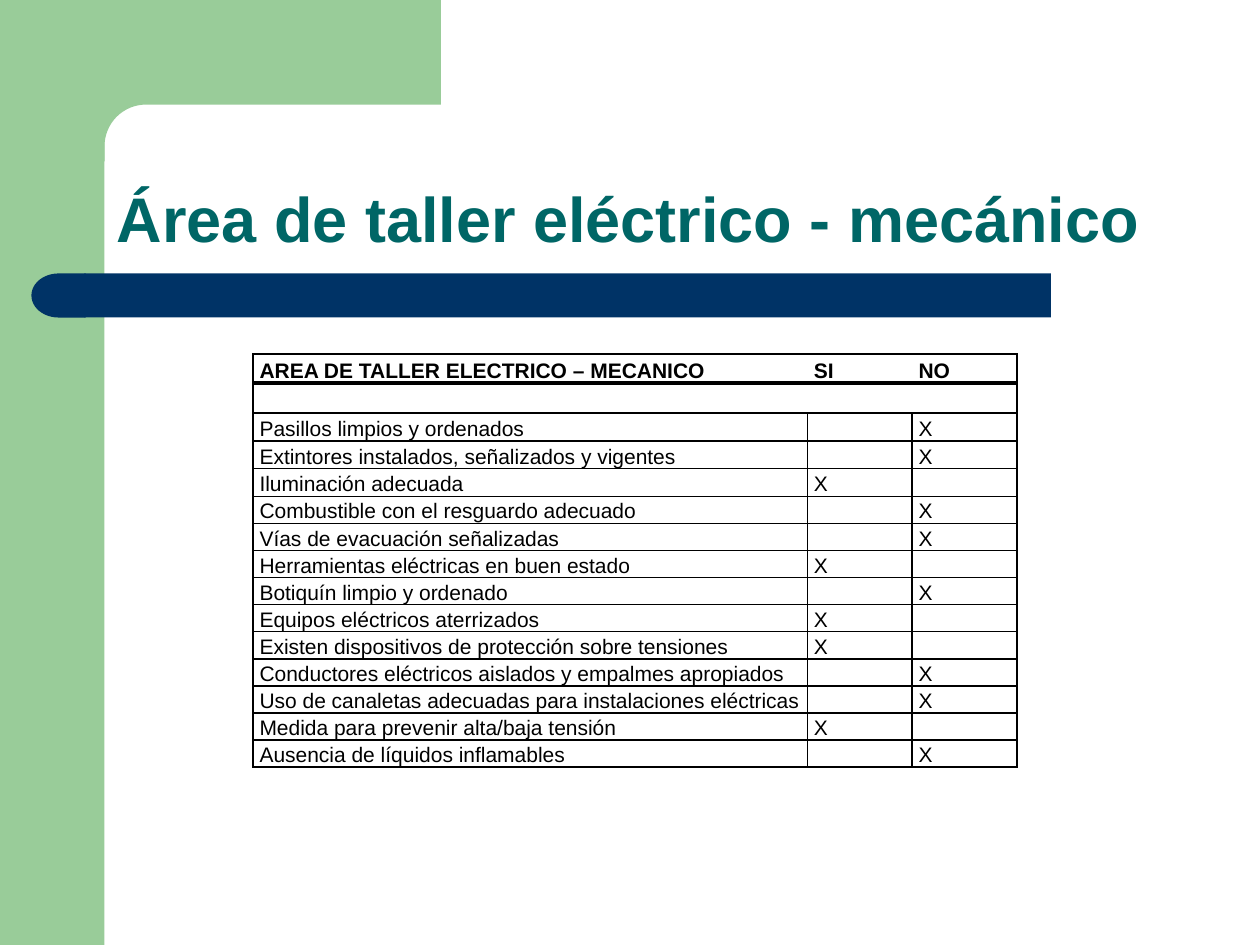
from math import cos, pi, sin

from lxml import etree
from pptx import Presentation
from pptx.dml.color import RGBColor
from pptx.enum.shapes import MSO_SHAPE
from pptx.enum.text import MSO_ANCHOR, PP_ALIGN
from pptx.oxml.ns import qn
from pptx.util import Inches, Pt

RECTANGLE = MSO_SHAPE.RECTANGLE
DELAY = MSO_SHAPE.FLOWCHART_DELAY
BOTTOM = MSO_ANCHOR.BOTTOM
LEFT = PP_ALIGN.LEFT

FONT = "Arial"
COLORS = {"green": "99CC99", "navy": "003366", "teal": "006666", "black": "000000"}

TITLE = "Área de taller eléctrico - mecánico"
HEADER = ("AREA DE TALLER ELECTRICO – MECANICO", "SI", "NO")
# Each check and whether it is met
CHECKS = [
    ("Pasillos limpios y ordenados", False),
    ("Extintores instalados, señalizados y vigentes", False),
    ("Iluminación adecuada", True),
    ("Combustible con el resguardo adecuado", False),
    ("Vías de evacuación señalizadas", False),
    ("Herramientas eléctricas en buen estado", True),
    ("Botiquín limpio y ordenado", False),
    ("Equipos eléctricos aterrizados", True),
    ("Existen dispositivos de protección sobre tensiones", True),
    ("Conductores eléctricos aislados y empalmes apropiados", False),
    ("Uso de canaletas adecuadas para instalaciones eléctricas", False),
    ("Medida para prevenir alta/baja tensión", True),
    ("Ausencia de líquidos inflamables", False),
]
COLUMN_WIDTHS = (4.4, 0.83, 0.83)
ROW_HEIGHTS = [0.23, 0.24] + [0.22] * 3 + [0.21] * 10
THIN, THICK = 1, 2.25


def rgb(name):
    return RGBColor.from_string(COLORS[name])


def paint(shape, color):
    shape.shadow.inherit = False
    shape.fill.solid()
    shape.fill.fore_color.rgb = rgb(color)
    shape.line.fill.background()


def add_block(slide, kind, box, color):
    block = slide.shapes.add_shape(kind, *map(Inches, box))
    paint(block, color)
    return block


def add_corner(slide):
    """Top band whose inner corner is a quarter circle."""
    center, radius, steps = 1.16, 0.33, 16
    angles = [pi / 2 * step / steps for step in range(steps + 1)]
    curve = [(center - radius * sin(a), center - radius * cos(a)) for a in angles]
    points = [(3.5, 0.83), *curve, (0.83, 1.28), (0.5, 1.28), (0.5, 0)]
    builder = slide.shapes.build_freeform(Inches(3.5), 0, scale=1.0)
    builder.add_line_segments([(Inches(x), Inches(y)) for x, y in points])
    paint(builder.convert_to_shape(), "green")


def style_run(run, size, color, bold):
    run.font.name = FONT
    run.font.size = Pt(size)
    run.font.bold = bold
    run.font.color.rgb = rgb(color)


def add_title(slide):
    box = slide.shapes.add_textbox(*map(Inches, (0.83, 0.83, 8.67, 1.25)))
    frame = box.text_frame
    frame.word_wrap = True
    frame.vertical_anchor = BOTTOM
    frame.text = TITLE
    paragraph = frame.paragraphs[0]
    paragraph.alignment = LEFT
    paragraph.line_spacing = 0.9
    style_run(paragraph.runs[0], 36, "teal", True)


def set_borders(cell, widths):
    """Widths in points for left, right, top and bottom; 0 is no line."""
    properties = cell._tc.get_or_add_tcPr()
    for index, (side, width) in enumerate(zip("LRTB", widths)):
        line = etree.Element(qn(f"a:ln{side}"), w=str(Pt(width)))
        if width:
            fill = etree.SubElement(line, qn("a:solidFill"))
            etree.SubElement(fill, qn("a:srgbClr"), val=COLORS["black"])
        else:
            etree.SubElement(line, qn("a:noFill"))
        properties.insert(index, line)


def fill_cell(cell, text, bold):
    cell.fill.background()
    cell.vertical_anchor = BOTTOM
    cell.margin_left = cell.margin_right = Inches(0.05)
    cell.margin_top = cell.margin_bottom = 0
    cell.text_frame.text = text
    paragraph = cell.text_frame.paragraphs[0]
    if text:
        paragraph.line_spacing = 1.15
        style_run(paragraph.runs[0], 12, "black", bold)
    else:
        # Keeps empty cells from stretching their row
        paragraph._p.get_or_add_endParaRPr().set("sz", "1200")


def border_widths(row, column):
    if row > 1:
        return (THIN,) * 4
    left = THIN if column == 0 else 0
    right = THIN if column == len(HEADER) - 1 else 0
    return (left, right) + ((THIN, THICK) if row == 0 else (THICK, THIN))


def add_checklist(slide):
    answers = [(check, "X" if met else "", "" if met else "X") for check, met in CHECKS]
    rows = [HEADER, ("", "", ""), *answers]
    frame = slide.shapes.add_table(
        len(rows), len(HEADER), Inches(2.01), Inches(2.81),
        Inches(sum(COLUMN_WIDTHS)), Inches(sum(ROW_HEIGHTS)))
    table = frame.table
    table.first_row = table.horz_banding = False
    for column, width in zip(table.columns, COLUMN_WIDTHS):
        column.width = Inches(width)
    for r, (texts, height) in enumerate(zip(rows, ROW_HEIGHTS)):
        table.rows[r].height = Inches(height)
        for c, text in enumerate(texts):
            cell = table.cell(r, c)
            fill_cell(cell, text, bold=r == 0)
            set_borders(cell, border_widths(r, c))


def main():
    presentation = Presentation()
    presentation.slide_width = Inches(10)
    presentation.slide_height = Inches(7.5)
    slide = presentation.slides.add_slide(presentation.slide_layouts[6])

    # Green frame
    add_block(slide, RECTANGLE, (0, 0, 0.83, 7.5), "green")
    add_corner(slide)

    # Navy bar with a rounded left end
    add_block(slide, RECTANGLE, (0.67, 2.17, 7.67, 0.35), "navy")
    bar_end = add_block(slide, DELAY, (0.25, 2.17, 0.43, 0.35), "navy")
    bar_end._element.spPr.xfrm.set("flipH", "1")

    # Content
    add_checklist(slide)
    add_title(slide)

    presentation.save("out.pptx")


if __name__ == "__main__":
    main()
